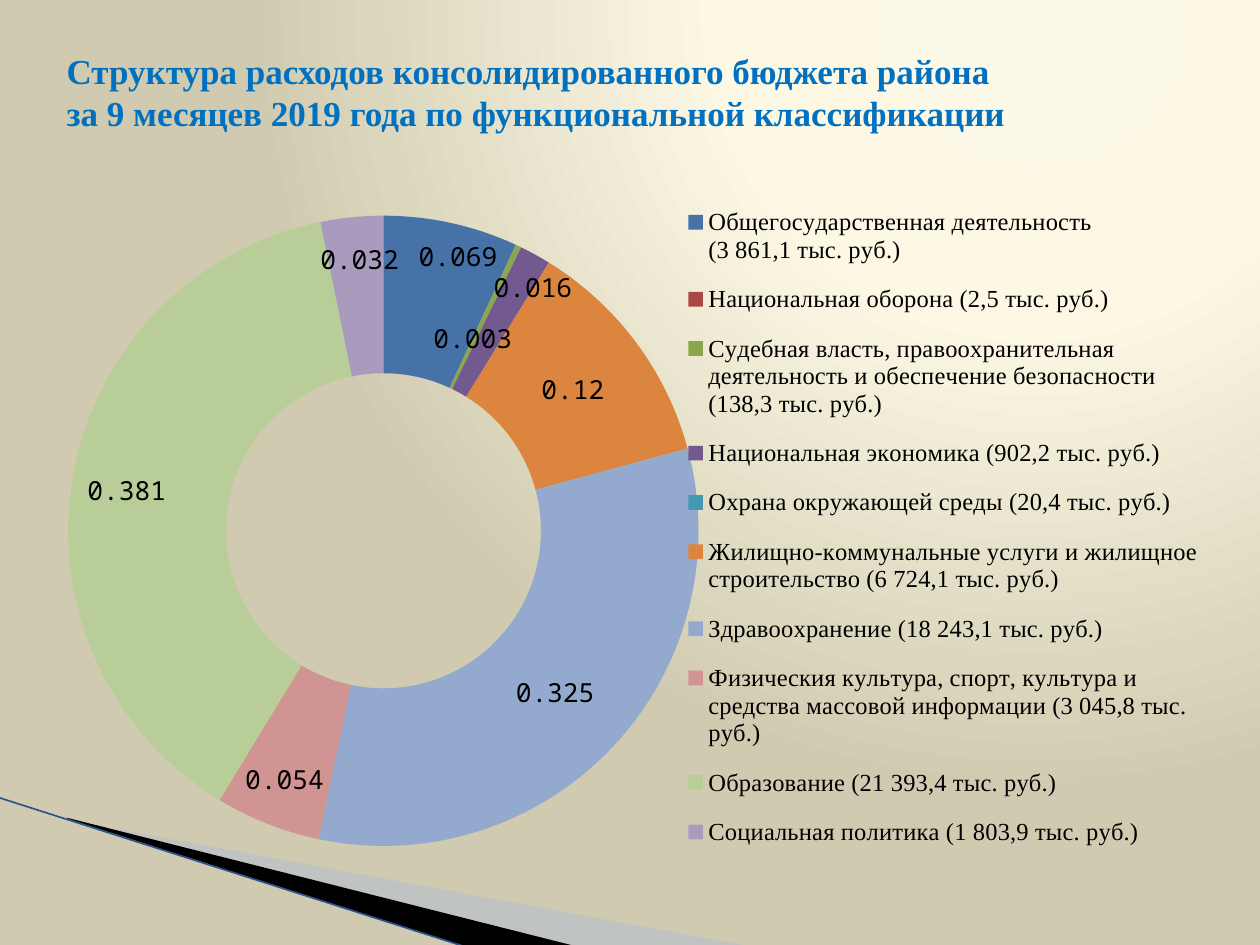
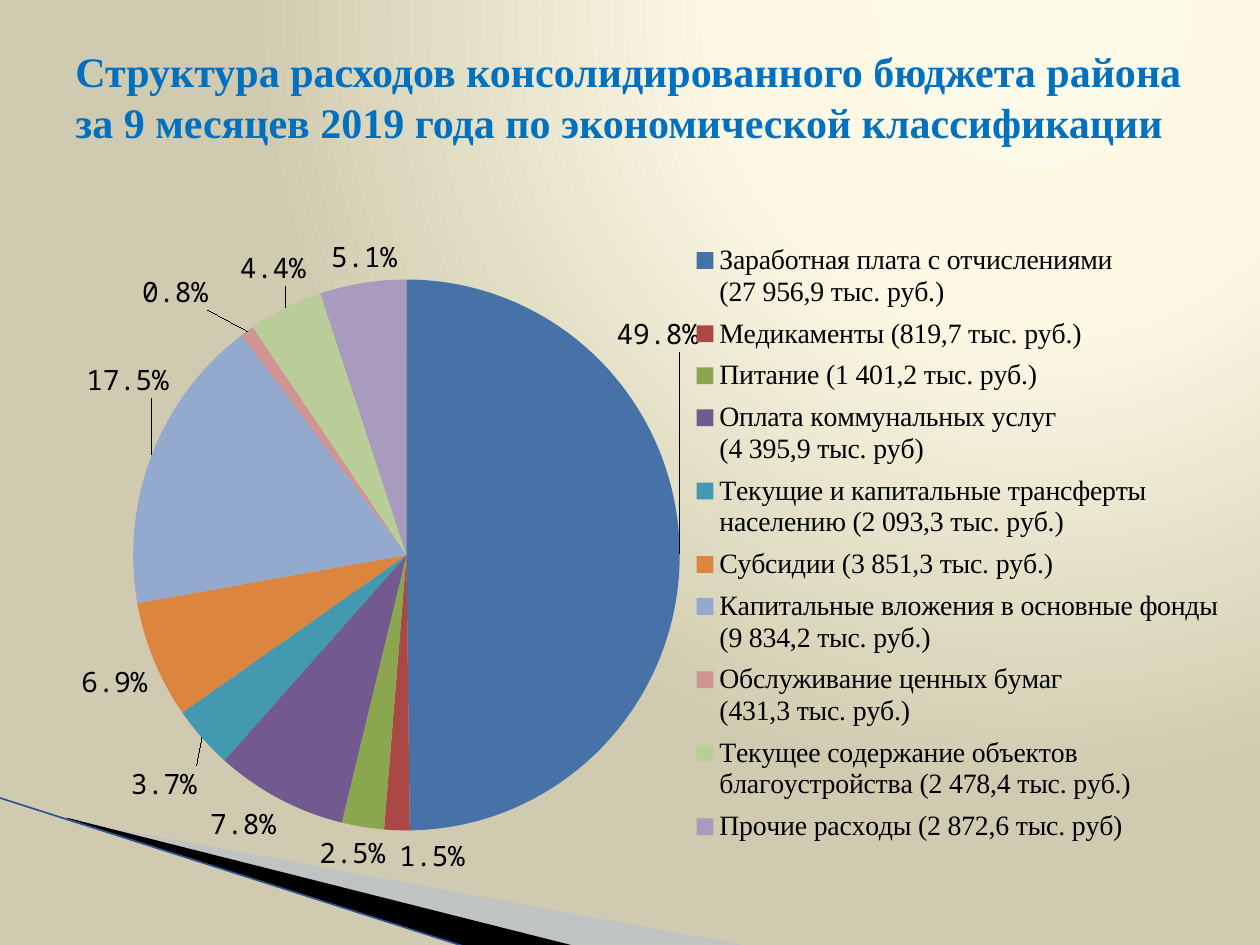
"""Build two slides on the structure of district budget spending."""
from pptx import Presentation
from pptx.chart.data import ChartData
from pptx.dml.color import RGBColor
from pptx.enum.chart import XL_CHART_TYPE, XL_LABEL_POSITION, XL_LEGEND_POSITION
from pptx.enum.shapes import MSO_CONNECTOR
from pptx.enum.text import MSO_ANCHOR
from pptx.oxml import parse_xml
from pptx.oxml.ns import nsdecls, qn
from pptx.util import Inches, Pt

RING, PIE = XL_CHART_TYPE.DOUGHNUT, XL_CHART_TYPE.PIE
OUT = XL_LABEL_POSITION.OUTSIDE_END
RIGHT = XL_LEGEND_POSITION.RIGHT
STRAIGHT = MSO_CONNECTOR.STRAIGHT
MIDDLE = MSO_ANCHOR.MIDDLE

SERIF, MONO = "Times New Roman", "Noto Sans Mono"
COLORS = {"title": "0070C0", "text": "000000", "wedge": "A7B9DB",
          "dark": "000000", "line": "2F5390"}
PARTS = ["4672A8", "AB4744", "8AA64F", "725990", "4299B0",
         "DC853E", "93A9CE", "D09493", "B8CD97", "A99BBD"]
GLOW = [(0, "FDF9E8"), (40, "FCF8E4"), (100, "D0CBB0")]
WEDGES = [
    ("wedge", 40, [(0.55, 6.51), (5.95, 7.51), (4.56, 7.51), (0.55, 6.5)]),
    ("dark", 100, [(0.53, 6.49), (4.57, 7.51), (3.72, 7.52), (0.54, 6.5)]),
]
EDGE = (-0.01, 6.33, 3.71, 7.52)

SLIDES = [
    {
        "title": "Структура расходов консолидированного бюджета района\v"
                 "за 9 месяцев 2019 года по функциональной классификации",
        "size": 20, "head": (0.43, 0.3, 9.29, 0.85),
        "kind": RING, "at": (0.35, 1.31, 9.45, 5.75),
        "plot": (0.01, 0.07, 0.55, 0.87), "key": (0.53, 0.03, 0.45, 0.94),
        "keysize": 14, "labsize": 15, "code": "General", "pos": None,
        "rows": [
            ("Общегосударственная деятельность\n(3 861,1 тыс. руб.)", 0.069, (0.02, -0.06)),
            ("Национальная оборона (2,5 тыс. руб.)", None, None),
            ("Судебная власть, правоохранительная деятельность и обеспечение "
             "безопасности\n(138,3 тыс. руб.)", 0.003, (-0.01, 0.03)),
            ("Национальная экономика (902,2 тыс. руб.)", 0.016, (0.03, -0.05)),
            ("Охрана окружающей среды (20,4 тыс. руб.)", None, None),
            ("Жилищно-коммунальные услуги и жилищное строительство "
             "(6 724,1 тыс. руб.)", 0.12, (0, 0)),
            ("Здравоохранение (18 243,1 тыс. руб.)", 0.325, (0, 0)),
            ("Физическия культура, спорт, культура и средства массовой "
             "информации (3 045,8 тыс. руб.)", 0.054, (-0.01, 0.04)),
            ("Образование (21 393,4 тыс. руб.)", 0.381, (-0.02, 0)),
            ("Социальная политика (1 803,9 тыс. руб.)", 0.032, (0, -0.05)),
        ],
    },
    {
        "title": "Структура расходов консолидированного бюджета района\v"
                 "за 9 месяцев 2019 года по экономической классификации",
        "size": 24, "head": (0.5, 0.3, 9.15, 0.93),
        "kind": PIE, "at": (0.5, 1.62, 9.38, 5.99),
        "plot": (0.05, 0.1, 0.47, 0.73), "key": (0.53, 0.04, 0.45, 0.82),
        "keysize": 16, "labsize": 16, "code": "0.0%", "pos": OUT,
        "rows": [
            ("Заработная плата с отчислениями\n(27 956,9 тыс. руб.)", 0.498, (-0.06, -0.29)),
            ("Медикаменты (819,7 тыс. руб.)", 0.015, (0.03, 0)),
            ("Питание (1 401,2 тыс. руб.)", 0.025, (0.02, 0)),
            ("Оплата коммунальных услуг\n(4 395,9 тыс. руб)", 0.078, (0, 0)),
            ("Текущие и капитальные трансферты населению "
             "(2 093,3 тыс. руб.)", 0.037, (0, 0.03)),
            ("Субсидии (3 851,3 тыс. руб.)", 0.069, (0, 0)),
            ("Капитальные вложения в основные фонды (9 834,2 тыс. руб.)",
             0.175, (0.02, -0.07)),
            ("Обслуживание ценных бумаг\n(431,3 тыс. руб.)", 0.008, (-0.03, -0.02)),
            ("Текущее содержание объектов благоустройства "
             "(2 478,4 тыс. руб.)", 0.044, (0.02, -0.02)),
            ("Прочие расходы (2 872,6 тыс. руб)", 0.051, (0.03, 0)),
        ],
    },
]


def rgb(name):
    return RGBColor.from_string(COLORS[name])


def inch(vals):
    return [Inches(v) for v in vals]


def style(font, size, name, color="text", bold=False):
    for key, val in {"size": Pt(size), "name": name, "bold": bold}.items():
        setattr(font, key, val)
    font.color.rgb = rgb(color)


def layout(vals, modes=()):
    tags = [(mode, "edge" if mode != "layoutTarget" else "inner") for mode in modes]
    tags += zip("xywh", vals)
    body = "".join(f'<c:{tag} val="{val}"/>' for tag, val in tags)
    return parse_xml(f'<c:layout {nsdecls("c")}><c:manualLayout>{body}'
                     '</c:manualLayout></c:layout>')


def place(owner, spot, node):
    for old in owner.findall(qn("c:layout")):
        owner.remove(old)
    owner.insert(spot, node)


def add_glow(master):
    master.background.fill.gradient()
    grad = next(master.element.iter(qn("a:gradFill")))
    stops = "".join(f'<a:gs pos="{pos * 1000}"><a:srgbClr val="{hue}"/></a:gs>'
                    for pos, hue in GLOW)
    new = parse_xml(f'<a:gradFill {nsdecls("a")} rotWithShape="1"><a:gsLst>{stops}'
                    '</a:gsLst><a:path path="circle"><a:fillToRect l="65000" '
                    'b="98000"/></a:path></a:gradFill>')
    grad.getparent().replace(grad, new)


def add_wedges(slide):
    for name, alpha, dots in WEDGES:
        first, *rest = [inch(dot) for dot in dots]
        form = slide.shapes.build_freeform(*first)
        form.add_line_segments(rest)
        shape = form.convert_to_shape()
        shape.shadow.inherit = False
        shape.line.fill.background()
        shape.fill.solid()
        shape.fill.fore_color.rgb = rgb(name)
        if alpha < 100:
            hue = next(shape.element.spPr.iter(qn("a:srgbClr")))
            hue.append(parse_xml(f'<a:alpha {nsdecls("a")} val="{alpha * 1000}"/>'))
    line = slide.shapes.add_connector(STRAIGHT, *inch(EDGE))
    line.line.color.rgb = rgb("line")
    line.line.width = Pt(0.95)
    line.element.spPr.append(parse_xml(f'<a:effectLst {nsdecls("a")}/>'))


def add_title(slide, page):
    frame = slide.shapes.add_textbox(*inch(page["head"])).text_frame
    for key, val in {"word_wrap": True, "vertical_anchor": MIDDLE}.items():
        setattr(frame, key, val)
    para = frame.paragraphs[0]
    para.text = page["title"]
    for run in para.runs:
        style(run.font, page["size"], SERIF, "title", True)


def add_label(point, page, shift):
    label = point.data_label
    style(label.font, page["labsize"], MONO)
    if page["pos"] is not None:
        label.position = page["pos"]
    return layout(shift)


def add_pie(slide, page):
    data = ChartData(number_format=page["code"])
    data.categories = [row[0] for row in page["rows"]]
    data.add_series("Series 1", [row[1] for row in page["rows"]])
    chart = slide.shapes.add_chart(page["kind"], *inch(page["at"]), data).chart
    style(chart.font, 18, MONO)
    chart.has_title = False
    chart.has_legend = True
    legend = chart.legend
    for key, val in {"position": RIGHT, "include_in_layout": False}.items():
        setattr(legend, key, val)
    style(legend.font, page["keysize"], SERIF)

    plot = chart.plots[0]
    plot.vary_by_categories = True
    series = plot.series[0]
    labels = series.data_labels
    style(labels.font, page["labsize"], MONO)
    for key, val in {"show_value": True, "number_format": page["code"],
                     "number_format_is_linked": False}.items():
        setattr(labels, key, val)
    if page["pos"] is not None:
        labels.position = page["pos"]

    shifts = []
    for num, (hue, row) in enumerate(zip(PARTS, page["rows"])):
        point = series.points[num]
        fill = point.format.fill
        fill.solid()
        fill.fore_color.rgb = RGBColor.from_string(hue)
        if row[2]:
            shifts.append(add_label(point, page, row[2]))
    space = chart.element
    for node, shift in zip(space.iter(qn("c:dLbl")), shifts):
        place(node, 1, shift)
        node.insert(2, parse_xml(f'<c:numFmt {nsdecls("c")} sourceLinked="0" '
                                 f'formatCode="{page["code"]}"/>'))
    area = next(space.iter(qn("c:plotArea")))
    for body in area.iter(qn("a:bodyPr")):
        body.set("wrap", "none")
    place(area, 0, layout(page["plot"], ("layoutTarget", "xMode", "yMode")))
    place(next(space.iter(qn("c:legend"))), 1,
          layout(page["key"], ("xMode", "yMode")))


def main():
    prs = Presentation()
    prs.slide_width, prs.slide_height = inch((10, 7.5))
    add_glow(prs.slide_master)
    for page in SLIDES:
        slide = prs.slides.add_slide(prs.slide_layouts[6])
        add_wedges(slide)
        add_pie(slide, page)
        add_title(slide, page)
    prs.save("out.pptx")


if __name__ == "__main__":
    main()
